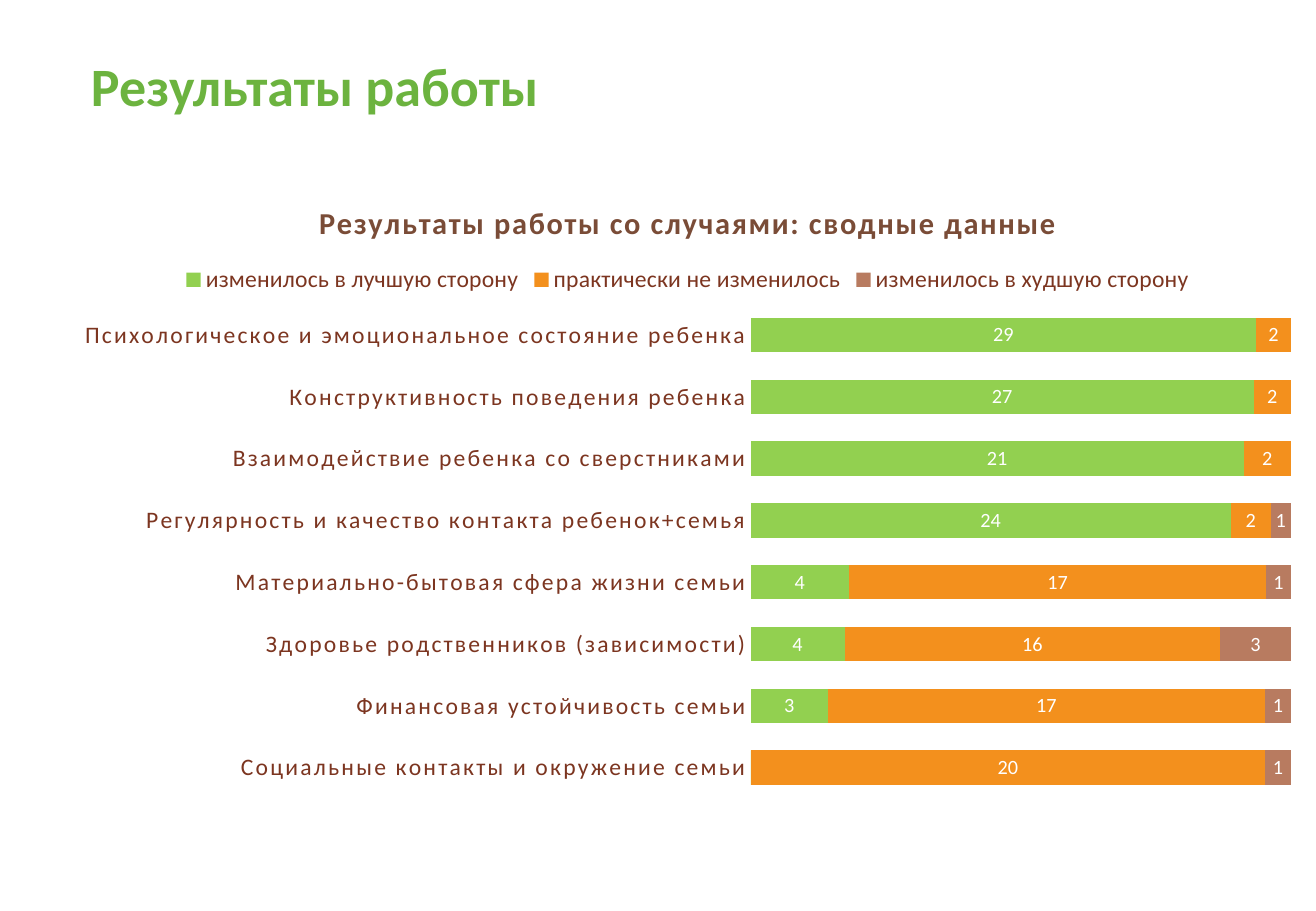
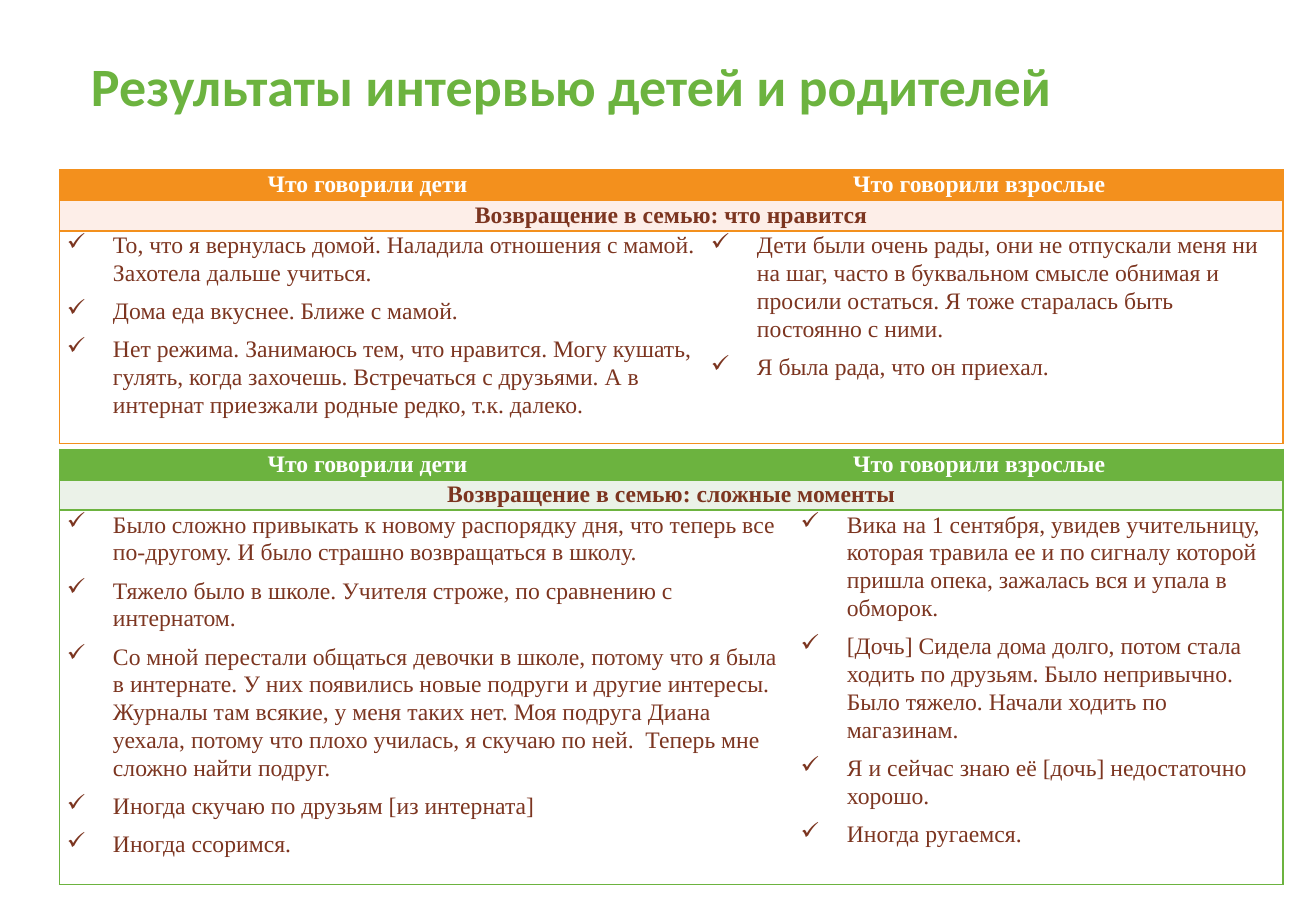
from lxml import etree
from pptx import Presentation
from pptx.chart.data import CategoryChartData
from pptx.dml.color import RGBColor
from pptx.enum.chart import XL_CHART_TYPE, XL_LABEL_POSITION, XL_LEGEND_POSITION, XL_TICK_MARK
from pptx.enum.text import MSO_ANCHOR, PP_ALIGN
from pptx.oxml import parse_xml
from pptx.oxml.ns import nsdecls, qn

BAR = XL_CHART_TYPE.BAR_STACKED_100
LABEL_CENTER = XL_LABEL_POSITION.CENTER
LEGEND_TOP = XL_LEGEND_POSITION.TOP
NO_TICK = XL_TICK_MARK.NONE
MIDDLE = MSO_ANCHOR.MIDDLE
CENTER, LEFT = PP_ALIGN.CENTER, PP_ALIGN.LEFT

PX = 9144  # 100 px to the inch


class Theme:
    green, orange, brown = "6CB33F", "F3901D", "7C3520"
    lime, clay, chart_title = "92D050", "B87B60", "7A4C37"
    white, pale_orange, pale_green = "FFFFFF", "FDEEE8", "EBF2E8"
    title = dict(name="Calibri", size=32, bold=True, color=green)
    chart_head = dict(name="Calibri", size=18, bold=True, color=chart_title)
    axis = dict(name="Calibri", size=14, bold=False, color=brown)
    value = dict(name="Calibri", size=12, bold=False, color=white)
    table_head = dict(name="Times New Roman", size=14, bold=True, color=white)
    table_sub = {**table_head, "color": brown}
    table_body = {**table_sub, "bold": False}


def style(font, fmt):
    for key, val in fmt.items():
        if key == "color":
            font.color.rgb = RGBColor.from_string(val)
        else:
            setattr(font, key, val * 12700 if key == "size" else val)


def fill_cell(cell, lines, fmt, fill, line, sides, bullets=False):
    cell.margin_left = cell.margin_right = 6 * PX
    cell.margin_top = cell.margin_bottom = 0
    cell.fill.solid()
    cell.fill.fore_color.rgb = RGBColor.from_string(fill)
    tcPr = cell._tc.get_or_add_tcPr()
    for i, side in enumerate(sides):
        tcPr.insert(i, parse_xml(
            f'<a:ln{side} {nsdecls("a")} w="12700"><a:solidFill>'
            f'<a:srgbClr val="{line}"/></a:solidFill></a:ln{side}>'))
    tf = cell.text_frame
    for i, text in enumerate(lines):
        p = tf.add_paragraph() if i else tf.paragraphs[0]
        p.alignment = LEFT if bullets else CENTER
        if bullets:
            pPr = p._p.get_or_add_pPr()
            pPr.set("marL", str(38 * PX))
            pPr.set("indent", str(-38 * PX))
            etree.SubElement(pPr, qn("a:buChar")).set("char", "✓")
        p.line_spacing = 1.07
        if i:
            p.space_before = 6 * 12700
        r = p.add_run()
        r.text = text
        style(r.font, fmt)


prs = Presentation()
prs.slide_width, prs.slide_height = 1083 * PX, 750 * PX

# Slides with their titles
slides = []
for title in ("Результаты работы", "Результаты интервью детей и родителей"):
    s = prs.slides.add_slide(prs.slide_layouts[6])
    tf = s.shapes.add_textbox(65 * PX, 22 * PX, 857 * PX, 106 * PX).text_frame
    tf.word_wrap, tf.vertical_anchor = True, MIDDLE
    p = tf.paragraphs[0]
    p.line_spacing = 0.8
    r = p.add_run()
    r.text = title
    style(r.font, Theme.title)
    slides.append(s)

# Slide 1: chart data
data = CategoryChartData()
data.categories = [
    "Психологическое и эмоциональное состояние ребенка",
    "Конструктивность поведения ребенка",
    "Взаимодействие ребенка со сверстниками",
    "Регулярность и качество контакта ребенок+семья",
    "Материально-бытовая сфера жизни семьи",
    "Здоровье родственников (зависимости)",
    "Финансовая устойчивость семьи",
    "Социальные контакты и окружение семьи",
]
series = [
    ("изменилось в лучшую сторону", Theme.lime, (29, 27, 21, 24, 4, 4, 3, 0)),
    ("практически не изменилось", Theme.orange, (2, 2, 2, 2, 17, 16, 17, 20)),
    ("изменилось в худшую сторону", Theme.clay, (0, 0, 0, 1, 1, 3, 1, 1)),
]
for name, _, values in series:
    data.add_series(name, values)
chart = slides[0].shapes.add_chart(BAR, 49 * PX, 146 * PX, 1034 * PX, 522 * PX, data).chart

# Chart title and legend
chart.has_title = True
p = chart.chart_title.text_frame.paragraphs[0]
r = p.add_run()
r.text = "Результаты работы со случаями: сводные данные"
style(r.font, Theme.chart_head)
r.font._element.set("spc", "100")
chart.chart_title.include_in_layout = False
chart.has_legend = True
chart.legend.position = LEGEND_TOP
chart.legend.include_in_layout = False
style(chart.legend.font, Theme.axis)

# Axes
axis = chart.category_axis
axis.reverse_order = True
axis.major_tick_mark = axis.minor_tick_mark = NO_TICK
axis.format.line.color.rgb = RGBColor.from_string(Theme.white)
font = axis.tick_labels.font
style(font, Theme.axis)
font._element.set("spc", "120")
chart.value_axis.has_major_gridlines = False
chart.value_axis.visible = False

# Bars; the number format leaves zeros unlabelled
plot = chart.plots[0]
plot.gap_width, plot.overlap, plot.vary_by_categories = 79, 100, False
for ser, (_, color, _) in zip(plot.series, series):
    ser.invert_if_negative = False
    ser.format.fill.solid()
    ser.format.fill.fore_color.rgb = RGBColor.from_string(color)
    labels = ser.data_labels
    labels.show_value = True
    labels.position = LABEL_CENTER
    labels.number_format, labels.number_format_is_linked = "0;;;", False
    style(labels.font, Theme.value)

# Plot area position, as shares of the chart
area = chart._chartSpace.find(".//" + qn("c:plotArea"))
for old in area.findall(qn("c:layout")):
    area.remove(old)
box = dict(x=0.55, y=0.2, w=0.43, h=0.78)
area.insert(0, parse_xml(
    f'<c:layout {nsdecls("c")}><c:manualLayout><c:layoutTarget val="inner"/>'
    '<c:xMode val="edge"/><c:yMode val="edge"/>'
    + "".join(f'<c:{k} val="{v}"/>' for k, v in box.items())
    + "</c:manualLayout></c:layout>"))

# Slide 2: interview tables
tables = [
    dict(top=140, cols=(507, 23, 477), rows=(23, 23, 175),
         color=Theme.orange, pale=Theme.pale_orange,
         topic="Возвращение в семью: что нравится",
         children=[
             "То, что я вернулась домой. Наладила отношения с мамой. Захотела дальше учиться.",
             "Дома еда вкуснее. Ближе с мамой.",
             "Нет режима. Занимаюсь тем, что нравится. Могу кушать, гулять, когда захочешь. "
             "Встречаться с друзьями. А в интернат приезжали родные редко, т.к. далеко.",
         ],
         adults=[
             "Дети были очень рады, они не отпускали меня ни на шаг, часто в буквальном смысле "
             "обнимая и просили остаться. Я тоже старалась быть постоянно с ними.",
             "Я была рада, что он приехал.",
         ]),
    dict(top=370, cols=(507, 97, 403), rows=(23, 23, 286),
         color=Theme.green, pale=Theme.pale_green,
         topic="Возвращение в семью: сложные моменты",
         children=[
             "Было сложно привыкать к новому распорядку дня, что теперь все по-другому. "
             "И было страшно возвращаться в школу.",
             "Тяжело было в школе. Учителя строже, по сравнению с интернатом.",
             "Со мной перестали общаться девочки в школе, потому что я была в интернате. "
             "У них появились новые подруги и другие интересы. Журналы там всякие, у меня "
             "таких нет. Моя подруга Диана уехала, потому что плохо училась, я скучаю по ней.  "
             "Теперь мне сложно найти подруг.",
             "Иногда скучаю по друзьям [из интерната]",
             "Иногда ссоримся.",
         ],
         adults=[
             "Вика на 1 сентября, увидев учительницу, которая травила ее и по сигналу которой "
             "пришла опека, зажалась вся и упала в обморок.",
             "[Дочь] Сидела дома долго, потом стала ходить по друзьям. Было непривычно. "
             "Было тяжело. Начали ходить по магазинам.",
             "Я и сейчас знаю её [дочь] недостаточно хорошо.",
             "Иногда ругаемся.",
         ]),
]
for t in tables:
    frame = slides[1].shapes.add_table(3, 3, 49 * PX, t["top"] * PX,
                                       sum(t["cols"]) * PX, sum(t["rows"]) * PX)
    tbl = frame.table
    tblPr = tbl._tbl.tblPr
    tblPr.find(qn("a:tableStyleId")).text = "{2D5ABB26-0587-4C30-8999-92F81FD0307C}"
    tbl.horz_banding = False
    for col, width in zip(tbl.columns, t["cols"]):
        col.width = width * PX
    for row, height in zip(tbl.rows, t["rows"]):
        row.height = height * PX

    # Row, first and last column, text, type, fill
    cells = [
        (0, 0, 0, ["Что говорили дети"], Theme.table_head, t["color"]),
        (0, 1, 2, ["Что говорили взрослые"], Theme.table_head, t["color"]),
        (1, 0, 2, [t["topic"]], Theme.table_sub, t["pale"]),
        (2, 0, 1, t["children"], Theme.table_body, Theme.white),
        (2, 2, 2, t["adults"], Theme.table_body, Theme.white),
    ]
    for row, first, last, lines, fmt, fill in cells:
        cell = tbl.cell(row, first)
        if last > first:
            cell.merge(tbl.cell(row, last))
        sides = ["L"] * (first == 0) + ["R"] * (last == 2) + ["T", "B"]
        fill_cell(cell, lines, fmt, fill, t["color"], sides, bullets=row == 2)

prs.save("out.pptx")
